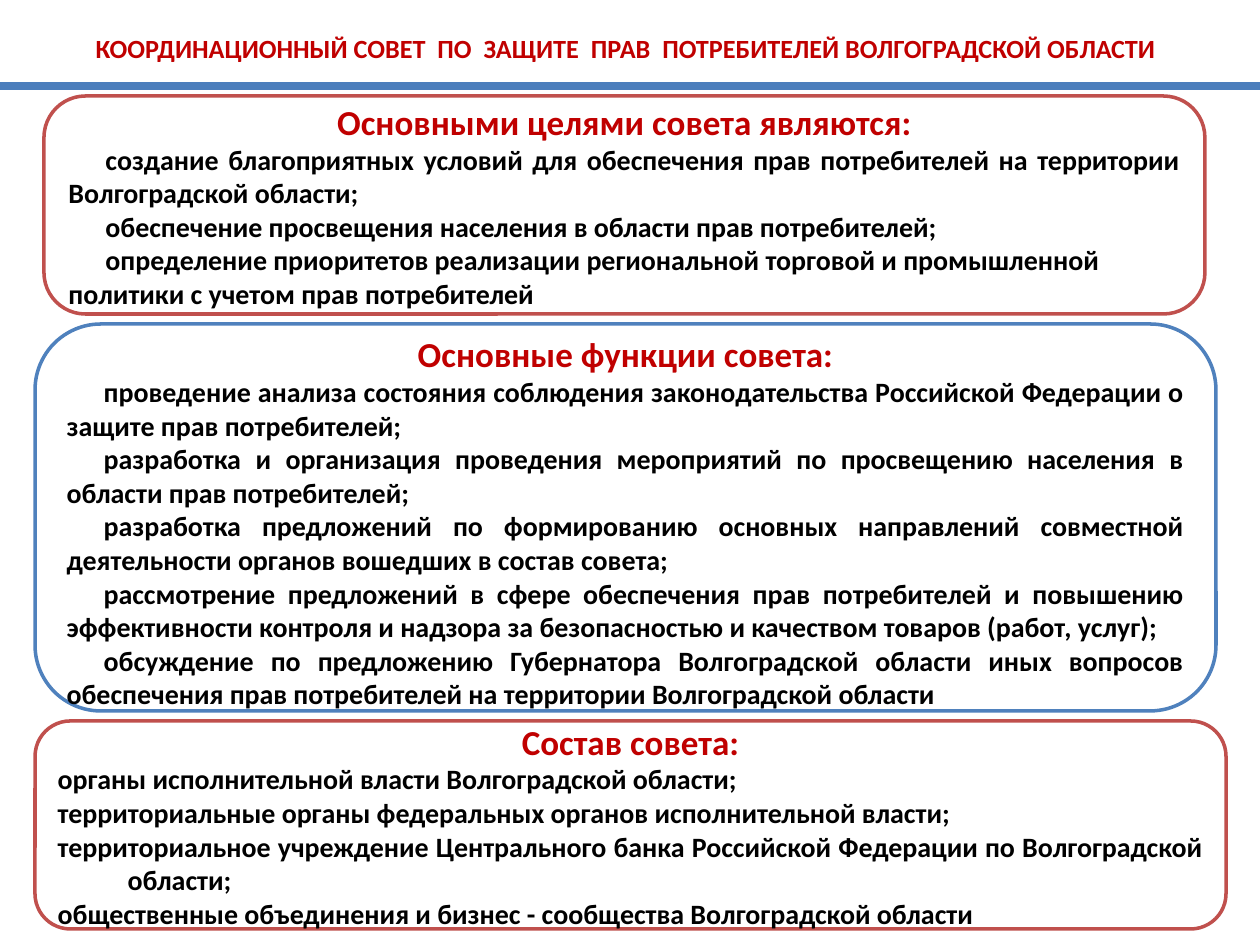
import pptx
import pptx.dml.color
import pptx.enum.shapes
import pptx.enum.text
import pptx.oxml.ns
import pptx.util
from lxml import etree

ALIGN = pptx.enum.text.PP_ALIGN
ANCHOR = pptx.enum.text.MSO_ANCHOR
SHAPE = pptx.enum.shapes.MSO_SHAPE
CONNECTOR = pptx.enum.shapes.MSO_CONNECTOR

RED = "C0504D"
BLUE = "4F81BD"

GOALS = [
    ("создание благоприятных условий для обеспечения прав потребителей на территории Волгоградской области;", ALIGN.JUSTIFY),
    ("обеспечение просвещения населения в области прав потребителей;", ALIGN.JUSTIFY),
    ("определение приоритетов реализации региональной торговой и промышленной политики с учетом прав потребителей", ALIGN.LEFT),
]
FUNCTIONS = [
    "проведение анализа состояния соблюдения законодательства Российской Федерации о защите прав потребителей;",
    "разработка и организация проведения мероприятий по просвещению населения в области прав потребителей;",
    "разработка предложений по формированию основных направлений совместной деятельности органов вошедших в состав совета;",
    "рассмотрение предложений в сфере обеспечения прав потребителей и повышению эффективности контроля и надзора за безопасностью и качеством товаров (работ, услуг);",
    "обсуждение по предложению Губернатора Волгоградской области иных вопросов обеспечения прав потребителей на территории Волгоградской области",
]
MEMBERS = [
    "органы исполнительной власти Волгоградской области;",
    "территориальные органы федеральных органов исполнительной власти;",
    "территориальное учреждение Центрального банка Российской Федерации по Волгоградской области;",
    "общественные объединения и бизнес - сообщества Волгоградской области",
]


def px(length):
    return pptx.util.Emu(round(length * 914400 / 126))


def color(value):
    return pptx.dml.color.RGBColor.from_string(value)


class CouncilSlide:
    font = "Calibri"
    accent = "C00000"
    body = "000000"

    def __init__(self, deck):
        self.slide = deck.slides.add_slide(deck.slide_layouts[6])

    def set_text(self, para, text, size, ink, align, margin=0, indent=0):
        para.text = text
        para.alignment = align
        para.font.name = self.font
        para.font.size = pptx.util.Pt(size)
        para.font.bold = True
        para.font.color.rgb = color(ink)
        properties = para._p.get_or_add_pPr()
        properties.set("marL", str(px(margin)))
        properties.set("indent", str(px(indent)))

    def title(self, text, left, top, width, height):
        box = self.slide.shapes.add_textbox(px(left), px(top), px(width), px(height))
        box.text_frame.word_wrap = True
        self.set_text(box.text_frame.paragraphs[0], text, 15, self.accent, ALIGN.CENTER)

    def rule(self, left, right, y):
        line = self.slide.shapes.add_connector(CONNECTOR.STRAIGHT, px(left), px(y), px(right), px(y))
        line.line.color.rgb = color("4B7EBC")
        line.line.width = pptx.util.Pt(4.5)
        etree.SubElement(line._element.spPr, pptx.oxml.ns.qn("a:effectLst"))

    def panel(self, heading, items, left, top, width, height, outline,
              rounding=0.17, text_drop=0, heading_spacing=None):
        box = self.slide.shapes.add_shape(
            SHAPE.ROUNDED_RECTANGLE, px(left), px(top), px(width), px(height))
        box.adjustments[0] = rounding
        box.shadow.inherit = False
        box.fill.solid()
        box.fill.fore_color.rgb = color("FFFFFF")
        box.line.color.rgb = color(outline)
        box.line.width = pptx.util.Pt(2)
        frame = box.text_frame
        frame.word_wrap = True
        frame.vertical_anchor = ANCHOR.MIDDLE
        frame.margin_top = px(6 + 2 * text_drop)
        frame.margin_bottom = px(6)
        title = frame.paragraphs[0]
        self.set_text(title, heading, 20, self.accent, ALIGN.CENTER)
        if heading_spacing:
            title.line_spacing = pptx.util.Pt(heading_spacing)
        for text, align, margin, indent in items:
            self.set_text(frame.add_paragraph(), text, 16, self.body, align, margin, indent)


def main():
    deck = pptx.Presentation()
    deck.slide_width = px(1260)
    deck.slide_height = px(945)
    page = CouncilSlide(deck)
    page.title("КООРДИНАЦИОННЫЙ СОВЕТ  ПО  ЗАЩИТЕ  ПРАВ  ПОТРЕБИТЕЛЕЙ ВОЛГОГРАДСКОЙ ОБЛАСТИ",
               41, 26, 1170, 44)
    page.rule(0, 1260, 86)
    page.panel("Основными целями совета являются:",
               [(text, align, 0, 37) for text, align in GOALS],
               44, 96, 1161, 218, RED, rounding=0.19)
    page.panel("Основные функции совета:",
               [(text, ALIGN.JUSTIFY, 0, 37) for text in FUNCTIONS],
               35, 324, 1181, 387, BLUE, text_drop=4, heading_spacing=24)
    page.panel("Состав совета:",
               [(text, ALIGN.JUSTIFY, 70, -70) for text in MEMBERS],
               35, 721, 1191, 208, RED)
    deck.save("out.pptx")


if __name__ == "__main__":
    main()
